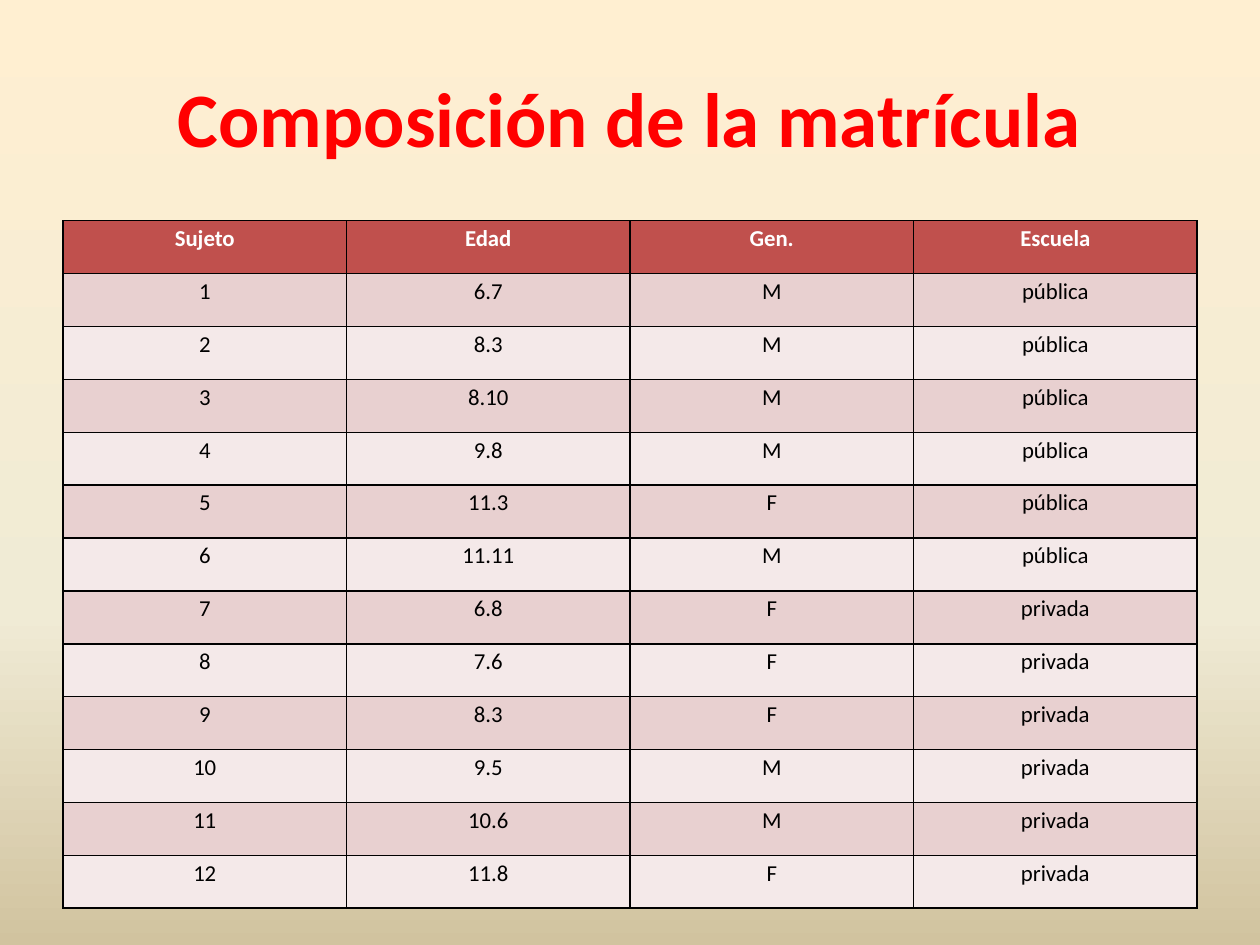
import pptx
import pptx.dml.color
import pptx.enum.text
import pptx.oxml
import pptx.oxml.ns
import pptx.util
from lxml import etree
from pptx.util import Cm

FONT = "Calibri"
HEADERS = ["Sujeto", "Edad", "Gen.", "Escuela"]
AGES = ["6.7", "8.3", "8.10", "9.8", "11.3", "11.11",
        "6.8", "7.6", "8.3", "9.5", "10.6", "11.8"]
GENDERS = "MMMMFMFFFMMF"
SCHOOLS = ["pública"] * 6 + ["privada"] * 6
BACKGROUND_STOPS = [(0, "FFEFD1"), (65, "F0EBD5"), (100, "D1C39F")]


def color(value):
    return pptx.dml.color.RGBColor.from_string(value)


def add_element(parent, tag, **attributes):
    return etree.SubElement(parent, pptx.oxml.ns.qn(tag), attributes)


def add_solid_fill(parent, value):
    add_element(add_element(parent, "a:solidFill"), "a:srgbClr", val=value)


def format_paragraph(paragraph, size, value, bold):
    paragraph.alignment = pptx.enum.text.PP_ALIGN.CENTER
    paragraph.font.name = FONT
    paragraph.font.size = pptx.util.Pt(size)
    paragraph.font.bold = bold
    paragraph.font.color.rgb = color(value)


def paint_background(slide):
    fill = slide.background.fill
    fill.gradient()
    fill.gradient_angle = 270
    stops = slide.element.find(".//" + pptx.oxml.ns.qn("a:gsLst"))
    for stop in list(stops):
        stops.remove(stop)
    for position, value in BACKGROUND_STOPS:
        stop = add_element(stops, "a:gs", pos=str(position * 1000))
        add_element(stop, "a:srgbClr", val=value)


def place_title(slide, text, left, top, width, height):
    title = slide.shapes.title
    title.left, title.top, title.width, title.height = left, top, width, height
    frame = title.text_frame
    frame.text = text
    frame.vertical_anchor = pptx.enum.text.MSO_ANCHOR.MIDDLE
    paragraph = frame.paragraphs[0]
    format_paragraph(paragraph, 44, "FF0000", True)
    properties = title.element.find(".//" + pptx.oxml.ns.qn("a:defRPr"))
    outline = add_element(properties, "a:ln", w=str(pptx.util.Pt(1.42)))
    add_solid_fill(outline, "002060")
    properties.insert(0, outline)


def add_borders(cell):
    properties = cell._tc.get_or_add_tcPr()
    for side in ("a:lnL", "a:lnR", "a:lnT", "a:lnB"):
        line = add_element(properties, side, w=str(pptx.util.Pt(1)))
        add_solid_fill(line, "000000")


def format_cell(cell, text, fill, text_color, bold):
    add_borders(cell)
    cell.fill.solid()
    cell.fill.fore_color.rgb = color(fill)
    cell.margin_left = cell.margin_right = Cm(0.18)
    cell.margin_top = cell.margin_bottom = 0
    cell.text = text
    paragraph = cell.text_frame.paragraphs[0]
    paragraph.line_spacing = 1.15
    paragraph.space_after = pptx.util.Pt(10)
    format_paragraph(paragraph, 13, text_color, bold)


def place_enrolment_table(slide, rows, left, top, width, height):
    frame = slide.shapes.add_table(len(rows), len(rows[0]), left, top, width, height)
    table = frame.table
    table.horz_banding = False
    for row_index, row in enumerate(rows):
        if row_index == 0:
            style = ("C0504D", "FFFFFF", True)
        else:
            style = ("E8D0D0" if row_index % 2 else "F4E9E9", "000000", False)
        for column_index, text in enumerate(row):
            format_cell(table.cell(row_index, column_index), text, *style)


def main():
    presentation = pptx.Presentation()
    presentation.slide_width = Cm(25.4)
    presentation.slide_height = Cm(19.05)
    slide = presentation.slides.add_slide(presentation.slide_layouts[5])
    paint_background(slide)
    left, width = Cm(1.27), Cm(22.86)
    place_title(slide, "Composición de la matrícula", left, Cm(0.76), width, Cm(3.18))
    subjects = [str(number) for number in range(1, len(AGES) + 1)]
    rows = [HEADERS, *zip(subjects, AGES, GENDERS, SCHOOLS)]
    place_enrolment_table(slide, rows, left, Cm(4.45), width, Cm(13.87))
    presentation.save("out.pptx")


if __name__ == "__main__":
    main()
